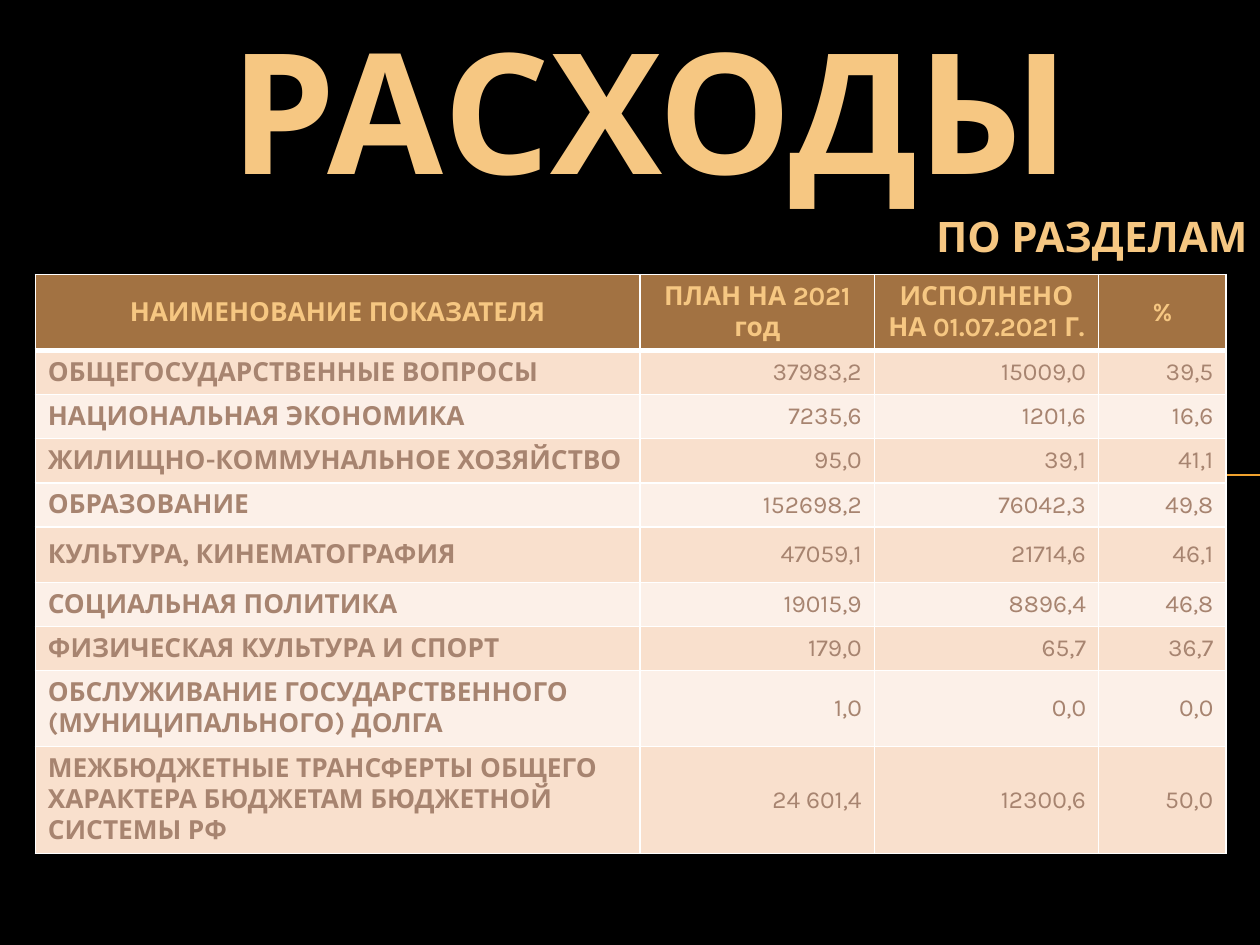
from lxml.etree import SubElement
from pptx import Presentation
from pptx.dml.color import RGBColor
from pptx.enum.shapes import MSO_CONNECTOR
from pptx.enum.text import MSO_ANCHOR, PP_ALIGN
from pptx.oxml.ns import qn
from pptx.util import Inches, Pt

GOLD, BROWN, TEXT = "F6C782", "A27242", "A78470"
BANDS = ["F9E0CD", "FCF0E8"]

HEADINGS = ["НАИМЕНОВАНИЕ ПОКАЗАТЕЛЯ", "ПЛАН НА 2021 год",
            "ИСПОЛНЕНО НА 01.07.2021 Г.", "%"]
EXPENSES = [
    ("ОБЩЕГОСУДАРСТВЕННЫЕ ВОПРОСЫ", "37983,2", "15009,0", "39,5"),
    ("НАЦИОНАЛЬНАЯ ЭКОНОМИКА", "7235,6", "1201,6", "16,6"),
    ("ЖИЛИЩНО-КОММУНАЛЬНОЕ ХОЗЯЙСТВО", "95,0", "39,1", "41,1"),
    ("ОБРАЗОВАНИЕ", "152698,2", "76042,3", "49,8"),
    ("КУЛЬТУРА, КИНЕМАТОГРАФИЯ", "47059,1", "21714,6", "46,1"),
    ("СОЦИАЛЬНАЯ ПОЛИТИКА", "19015,9", "8896,4", "46,8"),
    ("ФИЗИЧЕСКАЯ КУЛЬТУРА И СПОРТ", "179,0", "65,7", "36,7"),
    ("ОБСЛУЖИВАНИЕ ГОСУДАРСТВЕННОГО (МУНИЦИПАЛЬНОГО) ДОЛГА", "1,0", "0,0", "0,0"),
    ("МЕЖБЮДЖЕТНЫЕ ТРАНСФЕРТЫ ОБЩЕГО ХАРАКТЕРА БЮДЖЕТАМ БЮДЖЕТНОЙ СИСТЕМЫ РФ",
     "24 601,4", "12300,6", "50,0"),
]
COLUMN_WIDTHS = [4.8, 1.86, 1.78, 1.01]
ROW_HEIGHTS = [0.58, 0.34, 0.34, 0.34, 0.34, 0.44, 0.34, 0.34, 0.58, 0.83]


def rgb(value):
    return RGBColor.from_string(value)


class SlideBuilder:
    font = "Karla"

    def __init__(self, slide):
        self.slide = slide

    def background(self, color):
        fill = self.slide.background.fill
        fill.solid()
        fill.fore_color.rgb = rgb(color)

    def styled_text(self, frame, text, size, color, bold, align):
        frame.text = text
        paragraph = frame.paragraphs[0]
        paragraph.alignment = align
        for run in paragraph.runs:
            run.font.name = self.font
            run.font.size = Pt(size)
            run.font.bold = bold
            run.font.color.rgb = rgb(color)

    def text(self, text, left, top, width, height, size, align):
        box = self.slide.shapes.add_textbox(
            Inches(left), Inches(top), Inches(width), Inches(height))
        frame = box.text_frame
        frame.word_wrap = True
        frame.vertical_anchor = MSO_ANCHOR.TOP
        self.styled_text(frame, text, size, GOLD, True, align)

    def line(self, x1, y1, x2, y2, color, width):
        rule = self.slide.shapes.add_connector(
            MSO_CONNECTOR.STRAIGHT, Inches(x1), Inches(y1), Inches(x2), Inches(y2))
        rule.line.color.rgb = rgb(color)
        rule.line.width = Pt(width)
        SubElement(rule._element.spPr, qn("a:effectLst"))

    def cell(self, cell, text, size, color, bold, align, fill, borders):
        self.styled_text(cell.text_frame, text, size, color, bold, align)
        cell.vertical_anchor = MSO_ANCHOR.MIDDLE
        properties = cell._tc.get_or_add_tcPr()
        for side, width in borders.items():
            border = SubElement(properties, qn(f"a:ln{side}"), w=str(Pt(width)))
            solid = SubElement(border, qn("a:solidFill"))
            SubElement(solid, qn("a:srgbClr"), val="FFFFFF")
        cell.fill.solid()
        cell.fill.fore_color.rgb = rgb(fill)

    def table(self, left, top, headings, records, widths, heights):
        table = self.slide.shapes.add_table(
            len(heights), len(widths), Inches(left), Inches(top),
            Inches(sum(widths)), Inches(sum(heights))).table
        for column, width in zip(table.columns, widths):
            column.width = Inches(width)
        for row, height in zip(table.rows, heights):
            row.height = Inches(height)
        thin = {"L": 1, "R": 1, "T": 1, "B": 1}
        for c, heading in enumerate(headings):
            self.cell(table.cell(0, c), heading, 15, GOLD, True,
                      PP_ALIGN.CENTER, BROWN, {**thin, "B": 3})
        for r, record in enumerate(records, start=1):
            borders = {**thin, "T": 3} if r == 1 else thin
            for c, value in enumerate(record):
                is_name = c == 0
                self.cell(table.cell(r, c), value, 15 if is_name else 14, TEXT, is_name,
                          PP_ALIGN.LEFT if is_name else PP_ALIGN.RIGHT,
                          BANDS[(r - 1) % 2], borders)


def main():
    presentation = Presentation()
    presentation.slide_width = Inches(10)
    presentation.slide_height = Inches(7.5)
    builder = SlideBuilder(presentation.slides.add_slide(presentation.slide_layouts[6]))

    # Backdrop and rule
    builder.background("000000")
    builder.line(0.56, 3.77, 10, 3.77, "F0A22E", 0.75)

    # Title
    builder.text("РАСХОДЫ", 0.91, 0, 8.5, 1.49, 96, PP_ALIGN.CENTER)

    # Expenses by section
    builder.table(0.28, 2.18, HEADINGS, EXPENSES, COLUMN_WIDTHS, ROW_HEIGHTS)
    builder.text("ПО РАЗДЕЛАМ", 3.7, 1.62, 6.3, 0.5, 24, PP_ALIGN.RIGHT)

    presentation.save("out.pptx")


if __name__ == "__main__":
    main()
